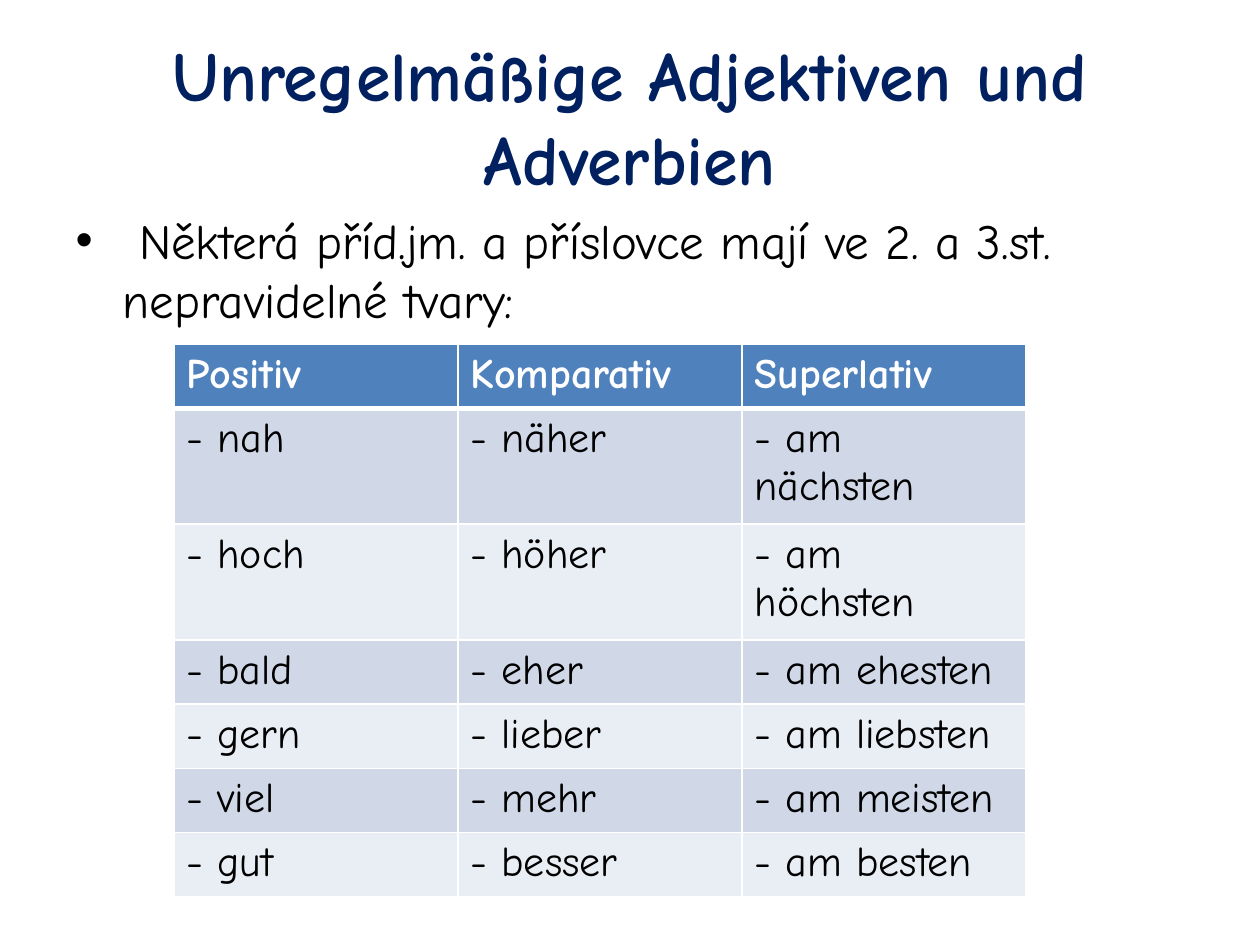
"""Build a slide on irregular German adjectives and adverbs."""
from dataclasses import dataclass

from lxml.etree import SubElement
from pptx import Presentation
from pptx.dml.color import RGBColor
from pptx.enum.text import MSO_ANCHOR, MSO_AUTO_SIZE, PP_ALIGN
from pptx.oxml.ns import qn
from pptx.util import Inches, Pt


@dataclass(frozen=True)
class Theme:
    font: str = "Comic Neue"
    title: str = "002060"
    text: str = "000000"
    white: str = "FFFFFF"
    header: str = "4F81BD"
    bands: tuple = ("D0D8E8", "E9EDF4")
    title_size: int = 40
    body_size: int = 28
    table_size: int = 24


THEME = Theme()
FORMS = (
    ("Positiv", "Komparativ", "Superlativ"),
    ("- nah", "- näher", "- am nächsten"),
    ("- hoch", "- höher", "- am höchsten"),
    ("- bald", "- eher", "- am ehesten"),
    ("- gern", "- lieber", "- am liebsten"),
    ("- viel", "- mehr", "- am meisten"),
    ("- gut", "- besser", "- am besten"),
)
COLUMN_WIDTH = 2.255
ROW_HEIGHTS = (0.51, 0.92, 0.92, 0.51, 0.51, 0.51, 0.51)


def add_text(paragraph, text, size, color, bold=False):
    run = paragraph.add_run()
    run.text = text
    run.font.name = THEME.font
    run.font.size = Pt(size)
    run.font.bold = bold
    run.font.color.rgb = RGBColor.from_string(color)


def place(shape, left, top, width, height):
    shape.left, shape.top = Inches(left), Inches(top)
    shape.width, shape.height = Inches(width), Inches(height)
    shape.text_frame.word_wrap = True
    shape.text_frame.auto_size = MSO_AUTO_SIZE.NONE


def fill_title(shape, text):
    place(shape, 0.5, 0.3, 9, 1.24)
    shape.text_frame.vertical_anchor = MSO_ANCHOR.MIDDLE
    paragraph = shape.text_frame.paragraphs[0]
    paragraph.alignment = PP_ALIGN.CENTER
    add_text(paragraph, text, THEME.title_size, THEME.title, bold=True)


def fill_body(shape, text):
    place(shape, 0.5, 1.62, 9, 5.59)
    paragraph = shape.text_frame.paragraphs[0]
    paragraph.space_before = Pt(0)
    add_text(paragraph, text, THEME.body_size, THEME.text)


def set_borders(cell, top, bottom):
    properties = cell._tc.get_or_add_tcPr()
    for side, width in (("L", 1), ("R", 1), ("T", top), ("B", bottom)):
        line = SubElement(properties, qn(f"a:ln{side}"), w=str(Pt(width)))
        fill = SubElement(line, qn("a:solidFill"))
        SubElement(fill, qn("a:srgbClr"), val=THEME.white)


def format_cell(cell, text, row):
    is_header = row == 0
    set_borders(cell, top=3 if row == 1 else 1, bottom=3 if is_header else 1)
    cell.fill.solid()
    background = THEME.header if is_header else THEME.bands[(row - 1) % 2]
    cell.fill.fore_color.rgb = RGBColor.from_string(background)
    color = THEME.white if is_header else THEME.text
    add_text(cell.text_frame.paragraphs[0], text, THEME.table_size, color, bold=is_header)


def add_forms_table(slide):
    columns = len(FORMS[0])
    frame = slide.shapes.add_table(
        len(FORMS), columns, Inches(1.38), Inches(2.73),
        Inches(columns * COLUMN_WIDTH), Inches(sum(ROW_HEIGHTS)))
    table = frame.table
    for column in table.columns:
        column.width = Inches(COLUMN_WIDTH)
    for row, (forms, height) in enumerate(zip(FORMS, ROW_HEIGHTS)):
        table.rows[row].height = Inches(height)
        for column, text in enumerate(forms):
            format_cell(table.cell(row, column), text, row)


def main():
    presentation = Presentation()
    presentation.slide_width, presentation.slide_height = Inches(10), Inches(7.5)
    slide = presentation.slides.add_slide(presentation.slide_layouts[1])
    fill_title(slide.shapes.title, "Unregelmäßige Adjektiven und Adverbien")
    fill_body(slide.placeholders[1],
              " Některá příd.jm. a příslovce mají ve 2. a 3.st. nepravidelné tvary:")
    add_forms_table(slide)
    presentation.save("out.pptx")


if __name__ == "__main__":
    main()
